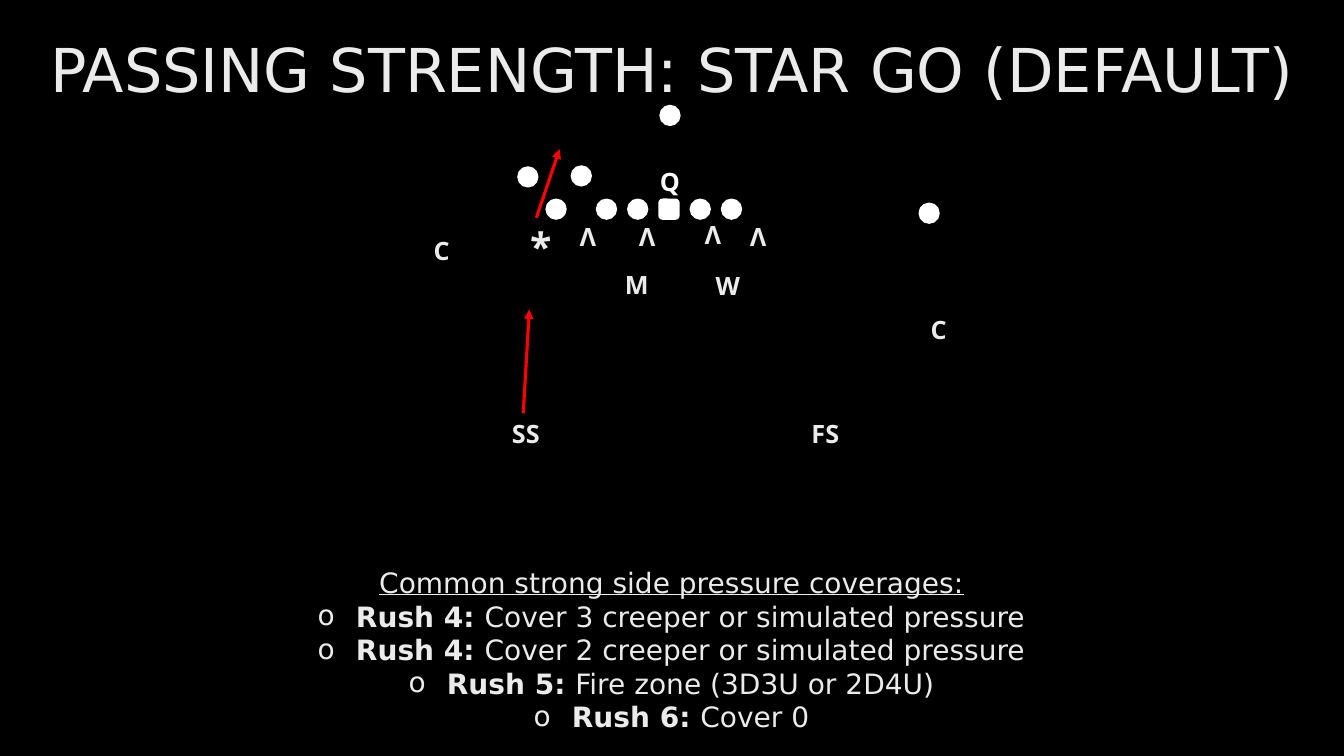
from lxml.etree import SubElement
from pptx import Presentation
from pptx.dml.color import RGBColor
from pptx.enum.shapes import MSO_CONNECTOR as Connector, MSO_SHAPE as Shape
from pptx.enum.text import MSO_ANCHOR as Anchor, MSO_AUTO_SIZE as AutoSize, PP_ALIGN as Align
from pptx.oxml.ns import qn
from pptx.util import Inches, Pt

BLACK, WHITE, PALE, RED = "000000", "FFFFFF", "EBEBEB", "FF0000"
BODY_FONT, LABEL_FONT = "DejaVu Sans", "Open Sans"
PLAYER = 0.19

# Offsets from the field's left top corner
LINE_START, LINE_TOP, LINE_STEP = 1.92, 0.98, 0.31
SKILL_PLAYERS = [(1.67, 0.65), (1.14, 0.66), (1.42, 0.98), (5.12, 1.02), (2.55, 0.05)]
DEFENDERS = [  # text, left, top, width, height, format
    ("C", 0.19, 1.29, 0.38, 0.4, {"wrap": False}),
    ("*", 1.16, 1.16, 0.31, 0.57, {"size": 28}),
    ("W", 3, 1.63, 0.31, 0.4, {}),
    ("M", 2.1, 1.62, 0.31, 0.4, {}),
    ("FS", 3.94, 3.1, 0.49, 0.4, {"wrap": False}),
    ("C", 5.12, 2.07, 0.38, 0.4, {"wrap": False}),
    ("SS", 0.97, 3.1, 0.49, 0.4, {}),
]
RUSHERS = [(3.33, 1.17), (2.23, 1.17), (1.64, 1.17), (2.88, 1.15)]
BLITZ_ARROWS = [((1.32, 1.16), (1.55, 0.48)), ((1.19, 3.1), (1.25, 2.07))]

COVERAGES = [
    ("Rush 4: ", "Cover 3 creeper or simulated pressure"),
    ("Rush 4: ", "Cover 2 creeper or simulated pressure"),
    ("Rush 5: ", "Fire zone (3D3U or 2D4U)"),
    ("Rush 6: ", "Cover 0"),
]


def color(value):
    return RGBColor.from_string(value)


def add_span(para, text, font=BODY_FONT, size=20, fill=PALE, bold=False, underline=False):
    span = para.add_run()
    span.text = text
    span.font.name = font
    span.font.size = Pt(size)
    span.font.color.rgb = color(fill)
    span.font.bold = bold
    span.font.underline = underline


def add_text(page, text, left, top, width, height, wrap=True, anchor=Anchor.TOP,
             rotation=0, grow=True, **style):
    box = page.shapes.add_textbox(Inches(left), Inches(top), Inches(width), Inches(height))
    box.rotation = rotation
    frame = box.text_frame
    frame.word_wrap = wrap
    frame.vertical_anchor = anchor
    frame.auto_size = AutoSize.SHAPE_TO_FIT_TEXT if grow else AutoSize.NONE
    para = frame.paragraphs[0]
    para.alignment = Align.CENTER
    add_span(para, text, **style)
    return box


def add_label(page, text, left, top, width, height, size=18, fill=PALE, **style):
    add_text(page, text, left, top, width, height, font=LABEL_FONT, size=size,
             fill=fill, bold=True, **style)


def add_player(page, left, top, kind=Shape.OVAL):
    player = page.shapes.add_shape(kind, Inches(left), Inches(top), Inches(PLAYER), Inches(PLAYER))
    player.shadow.inherit = False
    player.fill.solid()
    player.fill.fore_color.rgb = color(WHITE)
    player.line.color.rgb = color(WHITE)
    player.line.width = Pt(1.5)


def add_arrow(page, start, end):
    arrow = page.shapes.add_connector(Connector.STRAIGHT, *map(Inches, start + end))
    arrow.line.color.rgb = color(RED)
    arrow.line.width = Pt(2.25)
    SubElement(arrow.line._get_or_add_ln(), qn("a:tailEnd"), type="triangle")
    SubElement(arrow._element.spPr, qn("a:effectLst"))


def add_bullet(para, char, indent):
    props = para._p.get_or_add_pPr()
    props.set("marL", str(Inches(indent)))
    props.set("indent", str(-Inches(indent)))
    SubElement(props, qn("a:buFont"), typeface=BODY_FONT)
    SubElement(props, qn("a:buChar"), char=char)


def draw_title(page, left, top, width, height):
    add_text(page, "PASSING STRENGTH: STAR GO (DEFAULT)", left, top, width, height,
             anchor=Anchor.MIDDLE, grow=False, size=43.2)


def draw_offense(page, left, top):
    # Five linemen, with the square center in the middle
    for index in range(5):
        kind = Shape.ROUNDED_RECTANGLE if index == 2 else Shape.OVAL
        add_player(page, left + LINE_START + index * LINE_STEP, top + LINE_TOP, kind)
    for x, y in SKILL_PLAYERS:
        add_player(page, left + x, top + y)
    add_label(page, "Q", left + 2.44, top + 0.6, 0.41, 0.4, fill=WHITE, wrap=False)


def draw_defense(page, left, top):
    for text, x, y, width, height, style in DEFENDERS:
        add_label(page, text, left + x, top + y, width, height, **style)
    # Rushers are upside-down letters
    for x, y in RUSHERS:
        add_label(page, "V", left + x, top + y, 0.38, 0.4, wrap=False, rotation=180)
    for (x1, y1), (x2, y2) in BLITZ_ARROWS:
        add_arrow(page, (left + x1, top + y1), (left + x2, top + y2))


def draw_coverages(page, left, top, width, height):
    box = add_text(page, "Common strong side pressure coverages:", left, top, width, height,
                   underline=True)
    for rush, coverage in COVERAGES:
        para = box.text_frame.add_paragraph()
        para.alignment = Align.CENTER
        add_bullet(para, "o", 0.38)
        add_span(para, rush, bold=True)
        add_span(para, coverage)


def main():
    deck = Presentation()
    deck.slide_width, deck.slide_height = Inches(13.33), Inches(7.5)
    page = deck.slides.add_slide(deck.slide_layouts[6])
    page.background.fill.solid()
    page.background.fill.fore_color.rgb = color(BLACK)
    draw_title(page, 0, 0.19, 13.33, 0.97)
    draw_offense(page, 4, 1)
    draw_defense(page, 4, 1)
    draw_coverages(page, 1.66, 5.56, 10, 1.78)
    deck.save("out.pptx")


if __name__ == "__main__":
    main()
